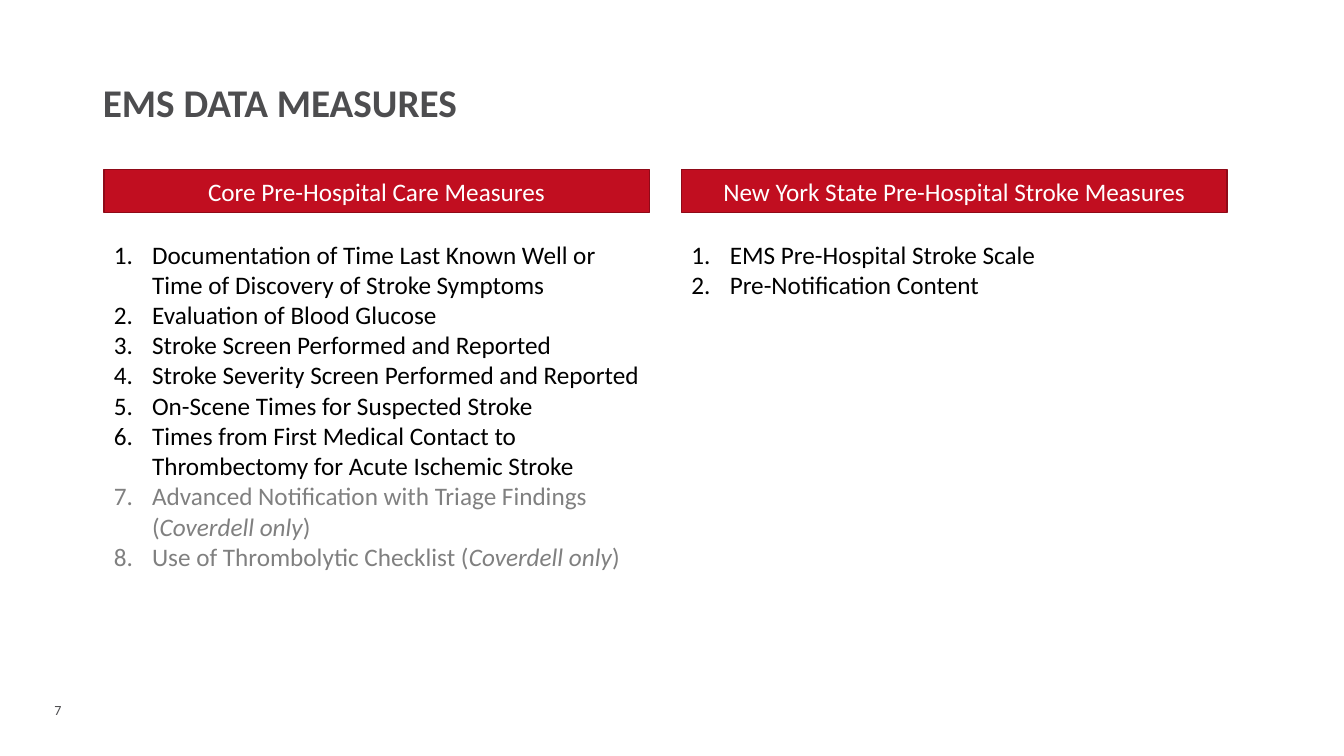
from lxml.etree import SubElement
from pptx import Presentation
from pptx.dml.color import RGBColor
from pptx.enum.shapes import MSO_SHAPE
from pptx.enum.text import MSO_ANCHOR, MSO_AUTO_SIZE, PP_ALIGN
from pptx.oxml.ns import qn
from pptx.util import Inches, Pt

RED = RGBColor(0xC1, 0x0E, 0x20)
DARK_RED = RGBColor(0x8F, 0x0A, 0x18)
SLATE = RGBColor(0x4D, 0x4D, 0x4F)
GRAY = RGBColor(0x80, 0x80, 0x80)
BLACK = RGBColor(0, 0, 0)
WHITE = RGBColor(0xFF, 0xFF, 0xFF)

COLUMN_LEFT = 1.03
COLUMN_STEP = 5.73
COLUMN_WIDTH = 5.41
COVERDELL = "Coverdell only"

# Each column: heading, list height, measures, measures that apply to Coverdell only
COLUMNS = [
    ("Core Pre-Hospital Care Measures", 4.01, [
        "Documentation of Time Last Known Well or Time of Discovery of Stroke Symptoms",
        "Evaluation of Blood Glucose",
        "Stroke Screen Performed and Reported",
        "Stroke Severity Screen Performed and Reported",
        "On-Scene Times for Suspected Stroke",
        "Times from First Medical Contact to Thrombectomy for Acute Ischemic Stroke",
    ], [
        "Advanced Notification with Triage Findings",
        "Use of Thrombolytic Checklist",
    ]),
    ("New York State Pre-Hospital Stroke Measures", 1.01, [
        "EMS Pre-Hospital Stroke Scale",
        "Pre-Notification Content",
    ], []),
]


class MeasuresSlide:
    font_name = "Calibri"
    body_size = 18

    def __init__(self, deck):
        self.slide = deck.slides.add_slide(deck.slide_layouts[5])

    def style(self, paragraph, size, color, bold=False):
        font = paragraph.font
        font.name = self.font_name
        font.size = Pt(size)
        font.bold = bold
        font.color.rgb = color

    def title(self, text):
        box = self.slide.shapes.title
        box.left, box.top = Inches(0.92), Inches(0.69)
        box.width, box.height = Inches(11.5), Inches(0.61)
        frame = box.text_frame
        frame.text = text
        frame.vertical_anchor = MSO_ANCHOR.BOTTOM
        frame.auto_size = MSO_AUTO_SIZE.NONE
        paragraph = frame.paragraphs[0]
        paragraph.alignment = PP_ALIGN.LEFT
        paragraph.line_spacing = 0.9
        self.style(paragraph, 28, SLATE, bold=True)

    def text_box(self, left, top, width, height, wrap=True):
        box = self.slide.shapes.add_textbox(
            Inches(left), Inches(top), Inches(width), Inches(height))
        box.text_frame.word_wrap = wrap
        return box.text_frame

    def page_number(self, number):
        frame = self.text_box(0.44, 6.91, 0.39, 0.27, wrap=False)
        frame.text = str(number)
        self.style(frame.paragraphs[0], 10, SLATE)

    def heading(self, left, text):
        bar = self.slide.shapes.add_shape(
            MSO_SHAPE.RECTANGLE, Inches(left), Inches(1.68),
            Inches(COLUMN_WIDTH), Inches(0.43))
        bar.shadow.inherit = False
        bar.fill.solid()
        bar.fill.fore_color.rgb = RED
        bar.line.color.rgb = DARK_RED
        bar.line.width = Pt(1)
        frame = bar.text_frame
        frame.text = text
        frame.vertical_anchor = MSO_ANCHOR.MIDDLE
        paragraph = frame.paragraphs[0]
        paragraph.alignment = PP_ALIGN.CENTER
        self.style(paragraph, self.body_size, WHITE)

    def numbered_list(self, left, height, measures, coverdell_measures):
        frame = self.text_box(left, 2.32, COLUMN_WIDTH, height)
        for index, measure in enumerate(measures + coverdell_measures):
            paragraph = frame.add_paragraph() if index else frame.paragraphs[0]
            self.number(paragraph)
            if index < len(measures):
                paragraph.add_run().text = measure
                self.style(paragraph, self.body_size, BLACK)
            else:
                for text in (f"{measure} (", COVERDELL, ")"):
                    span = paragraph.add_run()
                    span.text = text
                    span.font.italic = text == COVERDELL
                self.style(paragraph, self.body_size, GRAY)

    def number(self, paragraph):
        """Give the paragraph a hanging automatic number."""
        properties = paragraph._p.get_or_add_pPr()
        indent = Inches(0.38)
        properties.set("marL", str(indent))
        properties.set("indent", str(-indent))
        SubElement(properties, qn("a:buFont"), typeface="+mj-lt")
        SubElement(properties, qn("a:buAutoNum"), type="arabicPeriod")


def main():
    deck = Presentation()
    deck.slide_width, deck.slide_height = Inches(13.33), Inches(7.5)
    page = MeasuresSlide(deck)
    page.title("EMS DATA MEASURES")
    page.page_number(7)
    for index, (heading, height, measures, coverdell_measures) in enumerate(COLUMNS):
        left = COLUMN_LEFT + index * COLUMN_STEP
        page.heading(left, heading)
        page.numbered_list(left, height, measures, coverdell_measures)
    deck.save("out.pptx")


if __name__ == "__main__":
    main()
